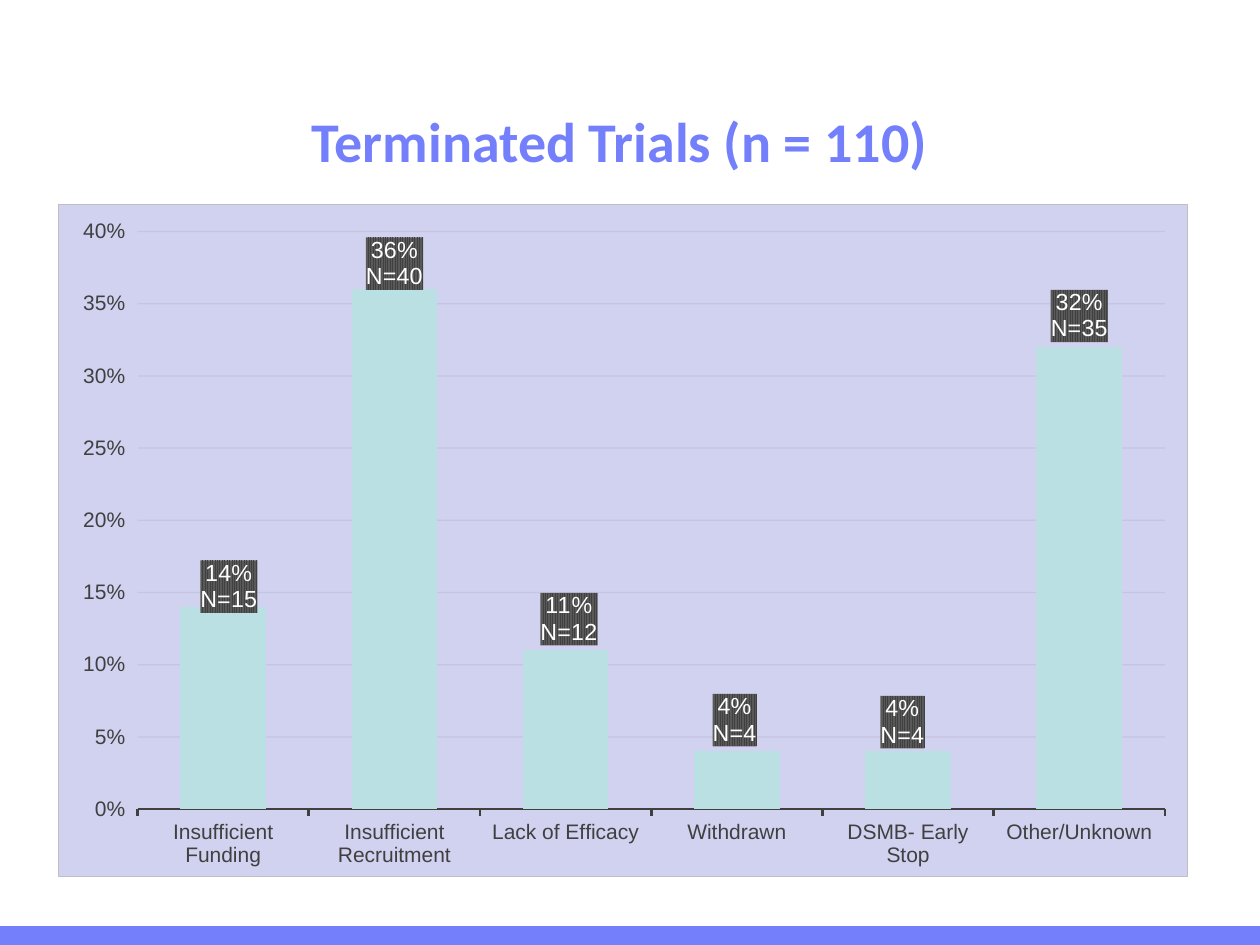
"""Build the slide charting why trials were terminated."""
from typing import NamedTuple

from lxml import etree
from pptx import Presentation
from pptx.chart.data import CategoryChartData
from pptx.dml.color import RGBColor
from pptx.enum.chart import XL_CHART_TYPE as ChartType, XL_LABEL_POSITION as LabelPos
from pptx.enum.chart import XL_TICK_MARK as Tick
from pptx.enum.shapes import MSO_SHAPE
from pptx.enum.text import MSO_ANCHOR, PP_ALIGN
from pptx.oxml import parse_xml
from pptx.oxml.ns import qn
from pptx.util import Inches, Pt

ACCENT = RGBColor(0x74, 0x80, 0xFB)
BAR = RGBColor(0xBB, 0xE0, 0xE3)
AXIS = RGBColor(0x40, 0x40, 0x40)
GRID = RGBColor(0x0D, 0x0D, 0x0D)
WHITE = RGBColor(0xFF, 0xFF, 0xFF)
BLACK = RGBColor(0, 0, 0)
PANEL = RGBColor(0xD1, 0xD1, 0xF0)
BORDER = RGBColor(0xBF, 0xBF, 0xBF)
LABEL_STRIPE = RGBColor(0x59, 0x59, 0x59)

NS = ('xmlns:c="http://schemas.openxmlformats.org/drawingml/2006/chart" '
      'xmlns:a="http://schemas.openxmlformats.org/drawingml/2006/main"')


class Reason(NamedTuple):
    name: str
    share: float
    count: int
    dx: float = 0
    dy: float = 0


REASONS = [
    Reason("Insufficient Funding", 0.14, 15, 0.005, 0.016),
    Reason("Insufficient Recruitment", 0.36, 40, 0, 0.008),
    Reason("Lack of Efficacy", 0.11, 12, 0.003),
    Reason("Withdrawn", 0.04, 4, -0.002),
    Reason("DSMB- Early Stop", 0.04, 4, -0.005, 0.003),
    Reason("Other/Unknown", 0.32, 35),
]


def add_title(s, text: str) -> None:
    tf = s.shapes.add_textbox(Inches(1.6), Inches(0.6), Inches(6.64), Inches(1.03)).text_frame
    tf.word_wrap = True
    tf.vertical_anchor = MSO_ANCHOR.MIDDLE
    p = tf.paragraphs[0]
    p.text = text
    p.alignment = PP_ALIGN.CENTER
    set_font(p.font, "Calibri", 32, ACCENT, True)


def set_font(font, name: str, size: float, color: RGBColor, bold: bool = False) -> None:
    font.name, font.size, font.bold = name, Pt(size), bold
    font.color.rgb = color


def layout_xml(x: float, y: float, extra: str = ""):
    return parse_xml(f'<c:layout {NS}><c:manualLayout>{extra}'
                     f'<c:x val="{x}"/><c:y val="{y}"/></c:manualLayout></c:layout>')


def style_panel(chart) -> None:
    chart_el = chart.element.find(qn("c:chart"))
    chart_el.addnext(parse_xml(
        f'<c:spPr {NS}><a:solidFill><a:srgbClr val="{PANEL}"/></a:solidFill>'
        f'<a:ln w="{Pt(0.75)}"><a:solidFill><a:srgbClr val="{BORDER}"/></a:solidFill></a:ln></c:spPr>'))
    plot_area = chart_el.find(qn("c:plotArea"))
    for old in plot_area.findall(qn("c:layout")):
        plot_area.remove(old)
    layout = layout_xml(0.07, 0.04, '<c:layoutTarget val="inner"/>'
                        '<c:xMode val="edge"/><c:yMode val="edge"/>')
    for tag, size in (("c:w", 0.91), ("c:h", 0.86)):
        etree.SubElement(layout[0], qn(tag)).set("val", str(size))
    plot_area.insert(0, layout)


def style_axes(chart) -> None:
    cat, val = chart.category_axis, chart.value_axis
    for axis in (cat, val):
        set_font(axis.tick_labels.font, "Arial", 12, AXIS)
        axis.major_tick_mark = Tick.OUTSIDE
        axis.minor_tick_mark = Tick.NONE
    cat.format.line.color.rgb = AXIS
    cat.format.line.width = Pt(1.5)
    val.format.line.fill.background()
    val.minimum_scale, val.maximum_scale, val.major_unit = 0, 0.4, 0.05
    val.tick_labels.number_format = "0%"
    val.tick_labels.number_format_is_linked = False
    grid = val.major_gridlines.format.line
    grid.color.rgb = GRID
    grid.width = Pt(0.75)
    color = next(val.major_gridlines._xAx.iter(qn("c:majorGridlines"))).find(".//" + qn("a:srgbClr"))
    etree.SubElement(color, qn("a:alpha")).set("val", "5000")


def add_label(series, index: int, reason: Reason) -> None:
    label = series.points[index].data_label
    tf = label.text_frame
    tf.text = f"{reason.share:.0%}\nN={reason.count}"
    for p in tf.paragraphs:
        set_font(p.runs[0].font, "Arial", 13.3, WHITE)
    label.position = LabelPos.OUTSIDE_END
    el = next(d for d in series._element.iter(qn("c:dLbl"))
              if d.find(qn("c:idx")).get("val") == str(index))
    el.find(qn("c:tx")).addnext(parse_xml(
        f'<c:spPr {NS}><a:pattFill prst="narVert"><a:fgClr><a:srgbClr val="{AXIS}"/></a:fgClr>'
        f'<a:bgClr><a:srgbClr val="{LABEL_STRIPE}"/></a:bgClr></a:pattFill></c:spPr>'))
    if reason.dx or reason.dy:
        el.find(qn("c:idx")).addnext(layout_xml(reason.dx, reason.dy))


def add_reason_chart(s) -> None:
    data = CategoryChartData(number_format="0%")
    data.categories = [reason.name for reason in REASONS]
    data.add_series("Series 1", [reason.share for reason in REASONS])
    chart = s.shapes.add_chart(ChartType.COLUMN_CLUSTERED, Inches(0.46), Inches(1.62),
                               Inches(8.97), Inches(5.34), data).chart
    chart.has_legend = chart.has_title = False
    set_font(chart.font, "Arial", 10, BLACK)
    style_panel(chart)
    style_axes(chart)
    plot = chart.plots[0]
    plot.gap_width = 100
    plot.vary_by_categories = False
    series = plot.series[0]
    series.format.fill.solid()
    series.format.fill.fore_color.rgb = BAR
    labels = series.data_labels
    labels.show_value = True
    labels.number_format = "0%"
    labels.number_format_is_linked = False
    set_font(labels.font, "Arial", 13.3, WHITE, True)
    for index, reason in enumerate(REASONS):
        add_label(series, index, reason)


def add_footer_band(s) -> None:
    sp = s.shapes.add_shape(MSO_SHAPE.RECTANGLE, 0, Inches(7.35), Inches(10), Inches(0.15))
    sp.shadow.inherit = False
    sp.fill.solid()
    sp.fill.fore_color.rgb = ACCENT
    sp.line.fill.background()


def main() -> None:
    prs = Presentation()
    prs.slide_width, prs.slide_height = Inches(10), Inches(7.5)
    s = prs.slides.add_slide(prs.slide_layouts[6])
    add_footer_band(s)
    add_title(s, "Terminated Trials (n = 110)")
    add_reason_chart(s)
    prs.save("out.pptx")


if __name__ == "__main__":
    main()
